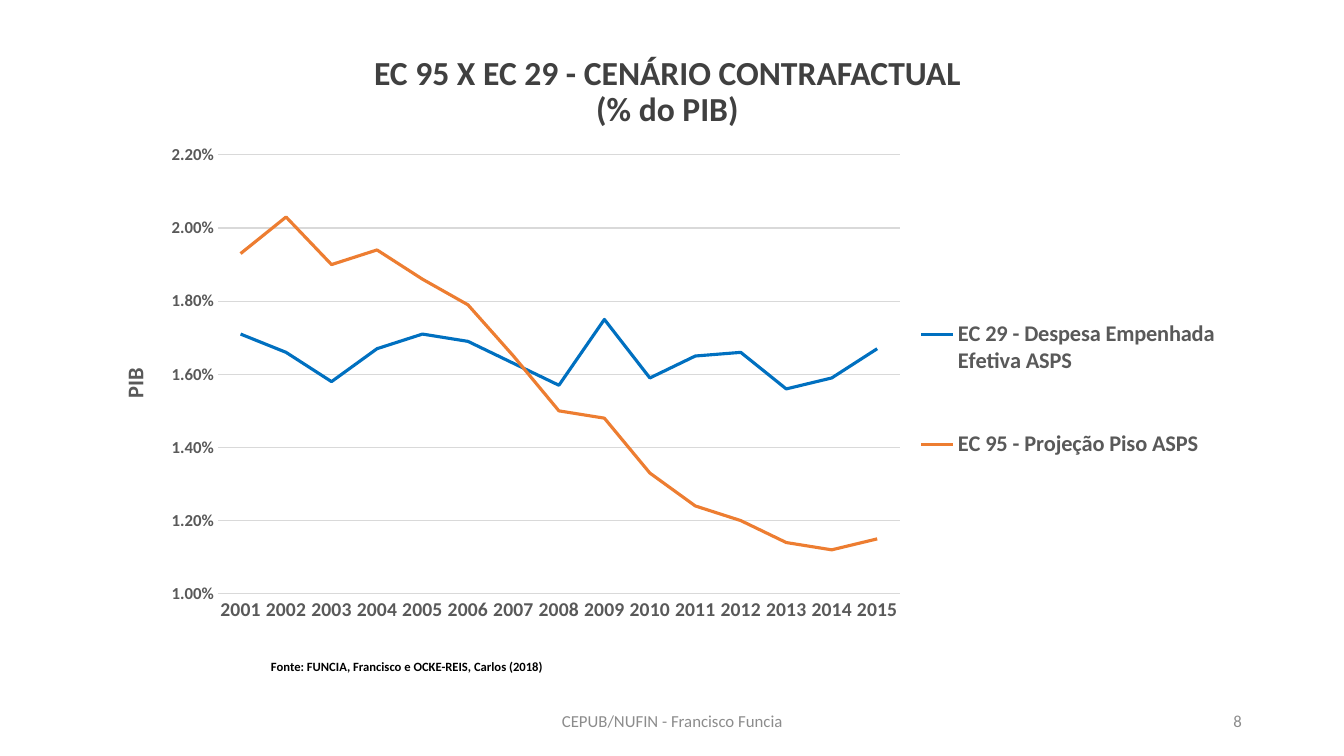
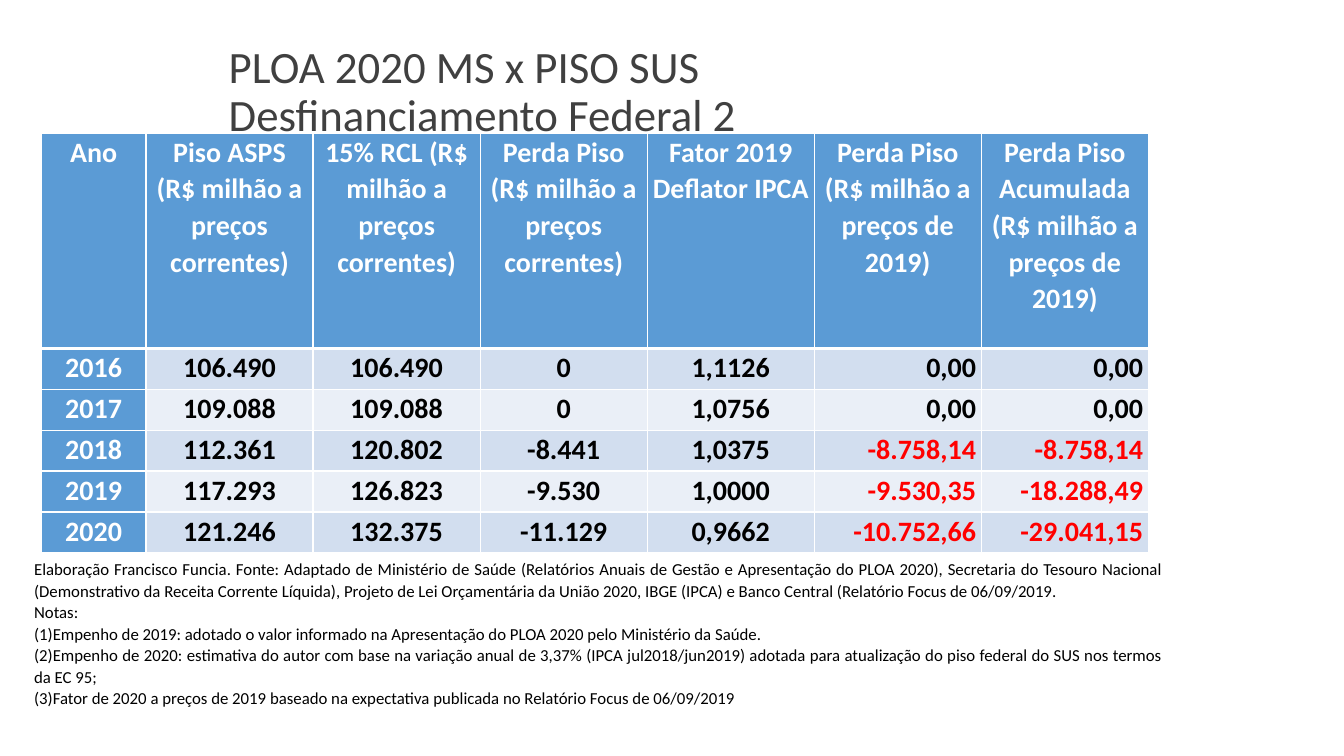
from lxml import etree
from pptx import Presentation
from pptx import util as u
from pptx.chart.data import CategoryChartData
from pptx.dml.color import RGBColor
from pptx.enum import chart as ch
from pptx.enum import text as t
from pptx.oxml import ns

COLORS = {
    "title": "404040", "label": "595959", "grid": "D9D9D9", "footer": "8C8C8C",
    "black": "000000", "white": "FFFFFF", "red": "FF0000",
    "ec29": "0070C0", "ec95": "ED7D31",
    "header": "5B9BD5", "odd": "D2DEEF", "even": "EAEFF7",
}
COLORS = {name: RGBColor.from_string(value) for name, value in COLORS.items()}
FONT = "Calibri"
LEFT, CENTER, RIGHT, JUSTIFY = (
    t.PP_ALIGN.LEFT, t.PP_ALIGN.CENTER, t.PP_ALIGN.RIGHT, t.PP_ALIGN.JUSTIFY)


def style(font, size, color, bold=False):
    font.name, font.size, font.bold = FONT, u.Pt(size), bold
    font.color.rgb = COLORS[color]


def write(shape, words, size, color, bold=False, align=LEFT, spacing=1.0,
          anchor=t.MSO_ANCHOR.MIDDLE, place=None):
    if place:
        shape.left, shape.top, shape.width, shape.height = map(u.Cm, place)
        shape.text_frame.word_wrap = True
        shape.text_frame.auto_size = t.MSO_AUTO_SIZE.NONE
    shape.text_frame.text = words
    shape.text_frame.vertical_anchor = anchor
    for para in shape.text_frame.paragraphs:
        para.alignment, para.line_spacing = align, spacing
        for span in para.runs:
            style(span.font, size, color, bold)


deck = Presentation()
deck.slide_width, deck.slide_height = u.Cm(33.87), u.Cm(19.05)
title_only = deck.slide_layouts[5]

page = deck.slides.add_slide(title_only)
write(page.shapes.title, "EC 95 X EC 29 - CENÁRIO CONTRAFACTUAL\v(% do PIB)", 24, "title",
      True, CENTER, 0.9, place=(6.15, 1.32, 21.34, 2.03))

data = CategoryChartData(number_format="0.00%")
data.categories = [str(year) for year in range(2001, 2016)]
data.add_series("EC 29 - Despesa Empenhada Efetiva ASPS", [
    0.0171, 0.0166, 0.0158, 0.0167, 0.0171, 0.0169, 0.0163, 0.0157,
    0.0175, 0.0159, 0.0165, 0.0166, 0.0156, 0.0159, 0.0167])
data.add_series("EC 95 - Projeção Piso ASPS", [
    0.0193, 0.0203, 0.019, 0.0194, 0.0186, 0.0179, 0.0165, 0.015,
    0.0148, 0.0133, 0.0124, 0.012, 0.0114, 0.0112, 0.0115])
chart = page.shapes.add_chart(
    ch.XL_CHART_TYPE.LINE, u.Cm(2.34), u.Cm(3.4), u.Cm(28.65), u.Cm(12.57), data).chart
chart.has_title = False
style(chart.font, 10, "black")
chart.plots[0].vary_by_categories = False
for series, color in zip(chart.plots[0].series, ("ec29", "ec95")):
    series.smooth = False
    series.format.line.width = u.Pt(2.25)
    series.format.line.color.rgb = COLORS[color]

years, shares = chart.category_axis, chart.value_axis
for axis, size in ((years, 14), (shares, 12)):
    axis.major_tick_mark = axis.minor_tick_mark = ch.XL_TICK_MARK.NONE
    style(axis.tick_labels.font, size, "label", True)
shares.minimum_scale, shares.maximum_scale, shares.major_unit = 0.01, 0.022, 0.002
shares.tick_labels.number_format = "0.00%"
shares.tick_labels.number_format_is_linked = False
shares.format.line.fill.background()
for line in (years.format.line, shares.major_gridlines.format.line):
    line.width = u.Pt(0.75)
    line.color.rgb = COLORS["grid"]
shares.axis_title.text_frame.text = "PIB"
style(shares.axis_title.text_frame.paragraphs[0].runs[0].font, 16, "label", True)

chart.has_legend = True
chart.legend.position = ch.XL_LEGEND_POSITION.RIGHT
chart.legend.include_in_layout = False
style(chart.legend.font, 16, "label", True)

for part, before, settings in (
    (chart._chartSpace.chart.plotArea, None,
     {"layoutTarget": "inner", "xMode": "edge", "yMode": "edge",
      "x": 0.11, "y": 0.04, "w": 0.6, "h": 0.88}),
    (chart.legend._element, "c:legendPos",
     {"xMode": "edge", "yMode": "edge", "x": 0.74, "y": 0.26, "w": 0.26, "h": 0.5}),
    (shares.axis_title._element, "c:tx",
     {"xMode": "edge", "yMode": "edge", "x": 0.02, "y": 0.46}),
):
    for old in part.findall(ns.qn("c:layout")):
        part.remove(old)
    layout = etree.Element(ns.qn("c:layout"))
    manual = etree.SubElement(layout, ns.qn("c:manualLayout"))
    for name, value in settings.items():
        etree.SubElement(manual, ns.qn("c:" + name)).set("val", str(value))
    part.insert(0 if before is None else part.index(part.find(ns.qn(before))) + 1, layout)

for words, size, color, bold, align, place in (
    ("Fonte: FUNCIA, Francisco e OCKE-REIS, Carlos (2018)", 9, "black", True, LEFT,
     (6.58, 16.48, 13.67, 0.64)),
    ("CEPUB/NUFIN - Francisco Funcia", 12, "footer", False, CENTER,
     (11.23, 17.65, 11.43, 1.02)),
    ("8", 12, "footer", False, RIGHT, (23.93, 17.65, 7.62, 1.02)),
):
    box = page.shapes.add_textbox(0, 0, 0, 0)
    write(box, words, size, color, bold, align, place=place)

page = deck.slides.add_slide(title_only)
write(page.shapes.title, "PLOA 2020 MS x PISO SUS\vDesfinanciamento Federal 2", 32, "title",
      spacing=0.9, place=(5.51, 0.76, 17.83, 3.18))

rows = [
    ["Ano", "Piso ASPS (R$ milhão a preços correntes)",
     "15% RCL (R$ milhão a preços correntes)",
     "Perda Piso (R$ milhão a preços correntes)", "Fator 2019 Deflator IPCA",
     "Perda Piso (R$ milhão a preços de 2019)",
     "Perda Piso Acumulada (R$ milhão a preços de 2019)"],
    ["2016", "106.490", "106.490", "0", "1,1126", "0,00", "0,00"],
    ["2017", "109.088", "109.088", "0", "1,0756", "0,00", "0,00"],
    ["2018", "112.361", "120.802", "-8.441", "1,0375", "-8.758,14", "-8.758,14"],
    ["2019", "117.293", "126.823", "-9.530", "1,0000", "-9.530,35", "-18.288,49"],
    ["2020", "121.246", "132.375", "-11.129", "0,9662", "-10.752,66", "-29.041,15"],
]
table = page.shapes.add_table(
    len(rows), len(rows[0]), u.Cm(1.04), u.Cm(3.35), u.Cm(27.9), u.Cm(10.58)).table
for index, column in enumerate(table.columns):
    column.width = u.Cm(4.21 if index else 2.64)
for index, row in enumerate(table.rows):
    row.height = u.Cm(1.03 if index else 5.43)

for r, row in enumerate(rows):
    for c, words in enumerate(row):
        cell = table.cell(r, c)
        heading = r == 0 or c == 0
        loss = c > 4
        color = "white" if heading else "red" if loss and words.startswith("-") else "black"
        write(cell, words, 20, color, True, RIGHT if loss and r else CENTER, 1.07)
        cell.margin_left = cell.margin_right = u.Cm(0.13)
        cell.margin_top = cell.margin_bottom = 0
        for side in ("lnL", "lnR", "lnT", "lnB"):
            width = u.Pt(3 if r == 0 and side == "lnB" else 1)
            border = etree.SubElement(cell._tc.get_or_add_tcPr(), ns.qn("a:" + side), w=str(width))
            paint = etree.SubElement(border, ns.qn("a:solidFill"))
            etree.SubElement(paint, ns.qn("a:srgbClr"), val=str(COLORS["white"]))
        cell.fill.solid()
        cell.fill.fore_color.rgb = COLORS["header" if heading else "odd" if r % 2 else "even"]

notes = [
    "Elaboração Francisco Funcia. Fonte: Adaptado de Ministério de Saúde (Relatórios Anuais de "
    "Gestão e Apresentação do PLOA 2020), Secretaria do Tesouro Nacional (Demonstrativo da "
    "Receita Corrente Líquida), Projeto de Lei Orçamentária da União 2020, IBGE (IPCA) e Banco "
    "Central (Relatório Focus de 06/09/2019.",
    "Notas:",
    "(1)Empenho de 2019: adotado o valor informado na Apresentação do PLOA 2020 pelo Ministério "
    "da Saúde.",
    "(2)Empenho de 2020: estimativa do autor com base na variação anual de 3,37% (IPCA "
    "jul2018/jun2019) adotada para atualização do piso federal do SUS nos termos da EC 95;",
    "(3)Fator de 2020 a preços de 2019 baseado na expectativa publicada no Relatório Focus de "
    "06/09/2019",
]
box = page.shapes.add_textbox(0, 0, 0, 0)
write(box, "\n".join(notes), 12, "black", align=JUSTIFY, spacing=1.07,
      anchor=t.MSO_ANCHOR.TOP, place=(0.61, 13.92, 28.96, 4.09))

deck.save("out.pptx")
